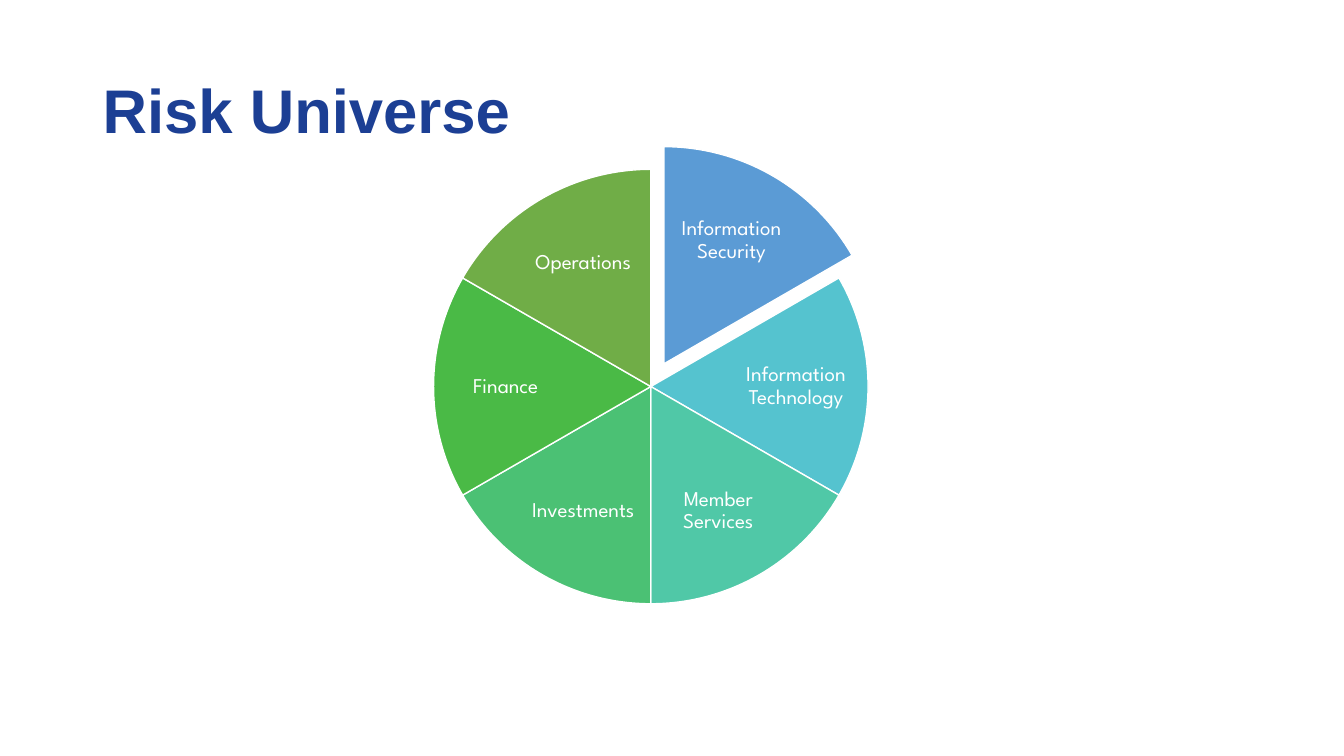
from math import cos, radians, sin

from pptx import Presentation
from pptx.dml.color import RGBColor
from pptx.enum.shapes import MSO_SHAPE
from pptx.enum.text import MSO_ANCHOR, PP_ALIGN
from pptx.util import Emu, Pt

PX = 9144  # EMU per px, 100 px to the inch
SLICE_DEGREES = 60
PULL = 26  # distance a pulled-out slice moves from the centre
WHITE = "FFFFFF"

# Clockwise from the top: name, fill, label offset from centre, label size, pulled out
RISK_AREAS = [
    ("Information Security", "5B9BD5", (67, -123), (126, 92), True),
    ("Information Technology", "55C3CF", (144, 0), (130, 87), False),
    ("Member Services", "50C8A7", (67, 123), (126, 92), False),
    ("Investments", "4BC174", (-67, 123), (126, 92), False),
    ("Finance", "4ABA46", (-144, 0), (130, 87), False),
    ("Operations", "70AD47", (-67, -123), (126, 92), False),
]


def px(length):
    return Emu(round(length * PX))


def color(value):
    return RGBColor.from_string(value)


def add_text(slide, box, text, font_name, size, text_color, bold=False,
             align=PP_ALIGN.LEFT, margins=(10, 5)):
    frame = slide.shapes.add_textbox(*map(px, box)).text_frame
    frame.word_wrap = True
    frame.vertical_anchor = MSO_ANCHOR.MIDDLE
    frame.margin_left = frame.margin_right = px(margins[0])
    frame.margin_top = frame.margin_bottom = px(margins[1])
    paragraph = frame.paragraphs[0]
    paragraph.alignment = align
    paragraph.line_spacing = 0.9
    run = paragraph.add_run()
    run.text = text
    run.font.name = font_name
    run.font.size = Pt(size)
    run.font.bold = bold
    run.font.color.rgb = color(text_color)


def add_slice(slide, box, start, fill):
    pie_slice = slide.shapes.add_shape(MSO_SHAPE.PIE, *map(px, box))
    # Angles are stored in 60000ths of a degree, adjustments in 100000ths
    for index, angle in enumerate((start, start + SLICE_DEGREES)):
        pie_slice.adjustments[index] = angle % 360 * 0.6
    pie_slice.shadow.inherit = False
    pie_slice.fill.solid()
    pie_slice.fill.fore_color.rgb = color(fill)
    pie_slice.line.color.rgb = color(WHITE)
    pie_slice.line.width = Pt(1)


def add_risk_wheel(slide, left, top, diameter):
    radius = diameter / 2
    for number, (name, fill, offset, size, pulled) in enumerate(RISK_AREAS):
        start = 270 + number * SLICE_DEGREES
        middle = radians(start + SLICE_DEGREES / 2)
        pull = PULL if pulled else 0
        x = left + pull * cos(middle)
        y = top + pull * sin(middle)
        add_slice(slide, (x, y, diameter, diameter), start, fill)

        # Label centred on its offset from the slice's own centre
        width, height = size
        label_box = (x + radius + offset[0] - width / 2,
                     y + radius + offset[1] - height / 2, width, height)
        add_text(slide, label_box, name, "League Spartan", 15, WHITE,
                 align=PP_ALIGN.CENTER, margins=(2, 2))


def main():
    presentation = Presentation()
    presentation.slide_width = px(1333)
    presentation.slide_height = px(750)
    slide = presentation.slides.add_slide(presentation.slide_layouts[6])

    # Title
    add_text(slide, (92, 40, 1150, 145), "Risk Universe", "Arial", 44,
             "1C3F94", bold=True)
    # Wheel of risk areas
    add_risk_wheel(slide, 430, 168, 431)

    presentation.save("out.pptx")


if __name__ == "__main__":
    main()
